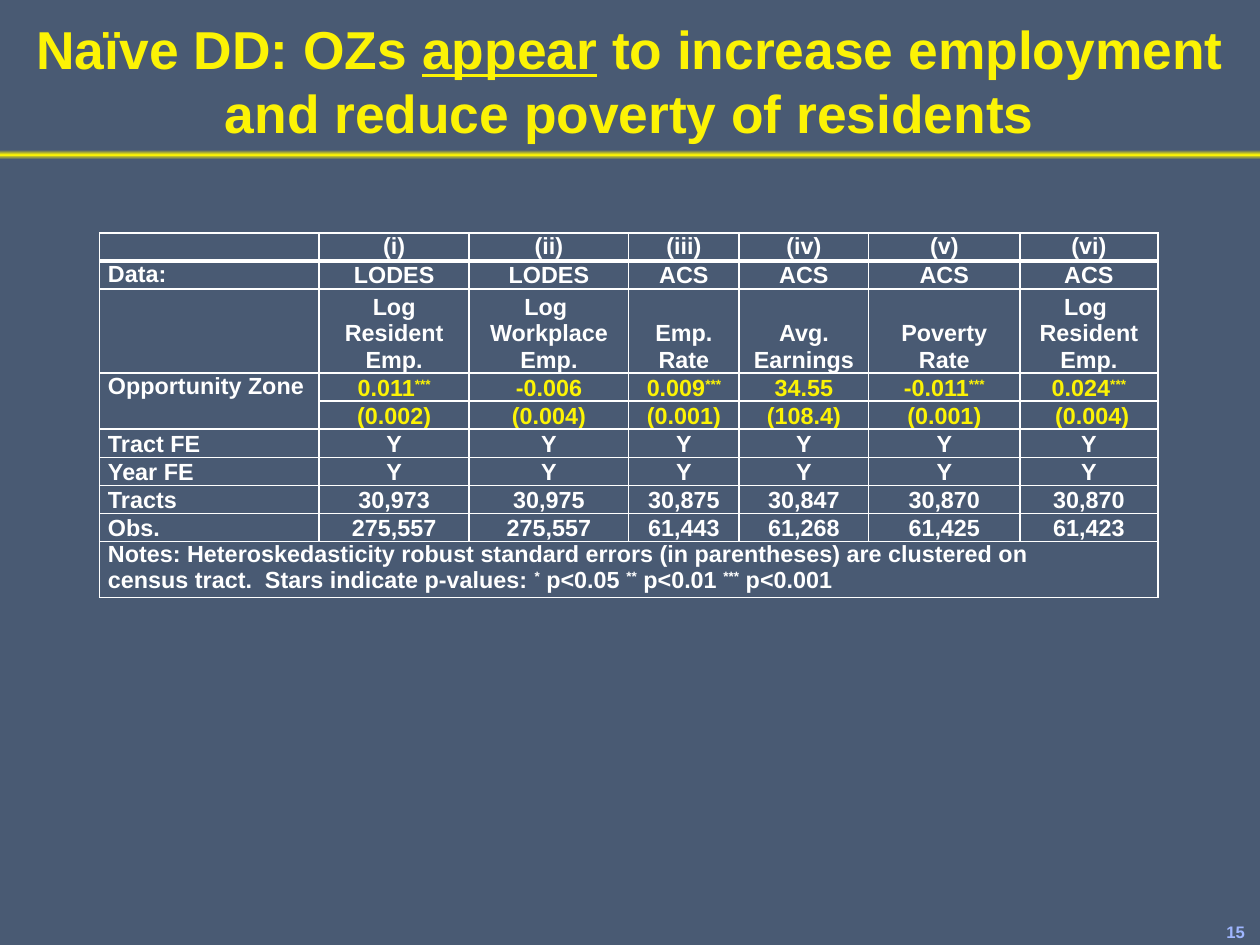
from copy import deepcopy
from pptx import Presentation
from pptx.dml.color import RGBColor
from pptx.enum.shapes import MSO_SHAPE
from pptx.enum.text import MSO_ANCHOR as ANCHOR, PP_ALIGN as ALIGN
from pptx.oxml import parse_xml
from pptx.oxml.ns import nsdecls
from pptx.util import Inches, Pt

SLATE = RGBColor(0x49, 0x5A, 0x73)
YELLOW = RGBColor(0xFC, 0xF3, 0x05)
WHITE = RGBColor(0xFF, 0xFF, 0xFF)
PALE_BLUE = RGBColor(0x9F, 0xB6, 0xFF)


def add_run(p, text, size, color, raised=False):
    r = p.add_run()
    r.text = text
    for name, value in {"name": "Arial", "size": Pt(size), "bold": True}.items():
        setattr(r.font, name, value)
    r.font.color.rgb = color
    if raised:
        r.font._element.set("baseline", "30000")
    return r


def add_text_box(left, top, width, height, **frame):
    tf = s.shapes.add_textbox(*map(Inches, (left, top, width, height))).text_frame
    for name, value in frame.items():
        setattr(tf, name, value)
    return tf.paragraphs[0]


prs = Presentation()
prs.slide_width, prs.slide_height = Inches(10.5), Inches(63 / 8)
s = prs.slides.add_slide(prs.slide_layouts[6])
s.background.fill.solid()
s.background.fill.fore_color.rgb = SLATE

# Page number
p = add_text_box(10.15, 7.65, 0.35, 0.23, word_wrap=False,
                 margin_left=Inches(0.07), margin_right=Inches(0.07),
                 margin_top=Inches(0.03), margin_bottom=Inches(0.03))
add_run(p, "15", 10, PALE_BLUE)

# Glowing rule under the title
rule = s.shapes.add_shape(MSO_SHAPE.RECTANGLE, 0, Inches(1.25), Inches(10.5), Inches(0.08))
rule.shadow.inherit = False
rule.line.fill.background()
rule.fill.gradient()
rule.fill.gradient_angle = 90
stop_list = rule._element.spPr.xpath("./a:gradFill/a:gsLst")[0]
stop_list.insert(1, deepcopy(stop_list[0]))
for stop, position, color in zip(rule.fill.gradient_stops, (0, 0.5, 1), (SLATE, YELLOW, SLATE)):
    stop.position = position
    stop.color.rgb = color

# Title
p = add_text_box(0, 0, 10.5, 1.25, word_wrap=True, vertical_anchor=ANCHOR.BOTTOM)
p.alignment = ALIGN.CENTER
add_run(p, "Naïve DD: OZs ", 32, YELLOW)
add_run(p, "appear", 32, YELLOW).font.underline = True
add_run(p, " to increase employment and reduce poverty of residents", 32, YELLOW)

# Regression table: "^" switches superscript on and off
NOTES = ("Notes: Heteroskedasticity robust standard errors (in parentheses) are clustered on "
         "census tract.  Stars indicate p-values: ^*^ p<0.05 ^**^ p<0.01 ^***^ p<0.001")
ROWS = [
    ["", "(i)", "(ii)", "(iii)", "(iv)", "(v)", "(vi)"],
    ["Data:", "LODES", "LODES", "ACS", "ACS", "ACS", "ACS"],
    ["", "Log\nResident Emp.", "Log \nWorkplace Emp.", "Emp. Rate", "Avg. Earnings",
     "Poverty Rate", "Log \nResident Emp."],
    ["Opportunity Zone", "0.011^***", "-0.006", "0.009^***", "34.55", "-0.011^***", "0.024^***"],
    ["", "(0.002)", "(0.004)", "(0.001)", "(108.4)", "(0.001)", " (0.004)"],
    ["Tract FE"] + ["Y"] * 6,
    ["Year FE"] + ["Y"] * 6,
    ["Tracts", "30,973", "30,975", "30,875", "30,847", "30,870", "30,870"],
    ["Obs.", "275,557", "275,557", "61,443", "61,268", "61,425", "61,423"],
    [NOTES] + [""] * 6,
]
COL_WIDTHS = [1.83, 1.25, 1.33, 0.92, 1.08, 1.26, 1.15]
ROW_HEIGHTS = [0, 0.13, 0.38] + [0.13] * 6 + [0.38]  # rows grow to fit their text
ESTIMATE_ROWS = (3, 4)

frame = s.shapes.add_table(len(ROWS), len(COL_WIDTHS), Inches(0.83), Inches(1.94),
                           Inches(8.83), Inches(3.03))
table = frame.table
table.first_row = table.horz_banding = False
for column, width in zip(table.columns, COL_WIDTHS):
    column.width = Inches(width)
for row, height in zip(table.rows, ROW_HEIGHTS):
    row.height = Inches(height)
frame.width, frame.height = Inches(8.83), Inches(3.03)
table.cell(3, 0).merge(table.cell(4, 0))
table.cell(9, 0).merge(table.cell(9, 6))

for i, row in enumerate(ROWS):
    for j, text in enumerate(row):
        cell = table.cell(i, j)
        top_label = j == 0 and i in (1, 3, 9)
        for name, value in {
            "margin_left": Inches(0.07), "margin_right": Inches(0.5 if text == NOTES else 0.07),
            "margin_top": 0, "margin_bottom": 0,
            "vertical_anchor": ANCHOR.TOP if top_label or i == 0 else ANCHOR.BOTTOM,
        }.items():
            setattr(cell, name, value)

        # Borders come before the fill in the cell properties
        tc_pr = cell._tc.get_or_add_tcPr()
        for side in ("lnL", "lnR", "lnT", "lnB"):
            heavy = (i, side) in ((0, "lnB"), (1, "lnT"))
            tc_pr.append(parse_xml(
                f'<a:{side} {nsdecls("a")} w="{Pt(3 if heavy else 1)}"><a:solidFill>'
                f'<a:srgbClr val="{WHITE}"/></a:solidFill></a:{side}>'))
        cell.fill.background()

        # Text; an empty cell still needs its font size to keep the row low
        if not text:
            cell.text_frame.paragraphs[0]._p.append(
                parse_xml(f'<a:endParaRPr {nsdecls("a")} sz="1400"/>'))
            continue
        color = YELLOW if i in ESTIMATE_ROWS and j else WHITE
        for k, line in enumerate(text.split("\n")):
            tf = cell.text_frame
            p = tf.add_paragraph() if k else tf.paragraphs[0]
            p.alignment = ALIGN.CENTER if j else ALIGN.LEFT
            for n, part in enumerate(line.split("^")):
                add_run(p, part, 14, color, raised=n % 2 == 1)

prs.save("out.pptx")
